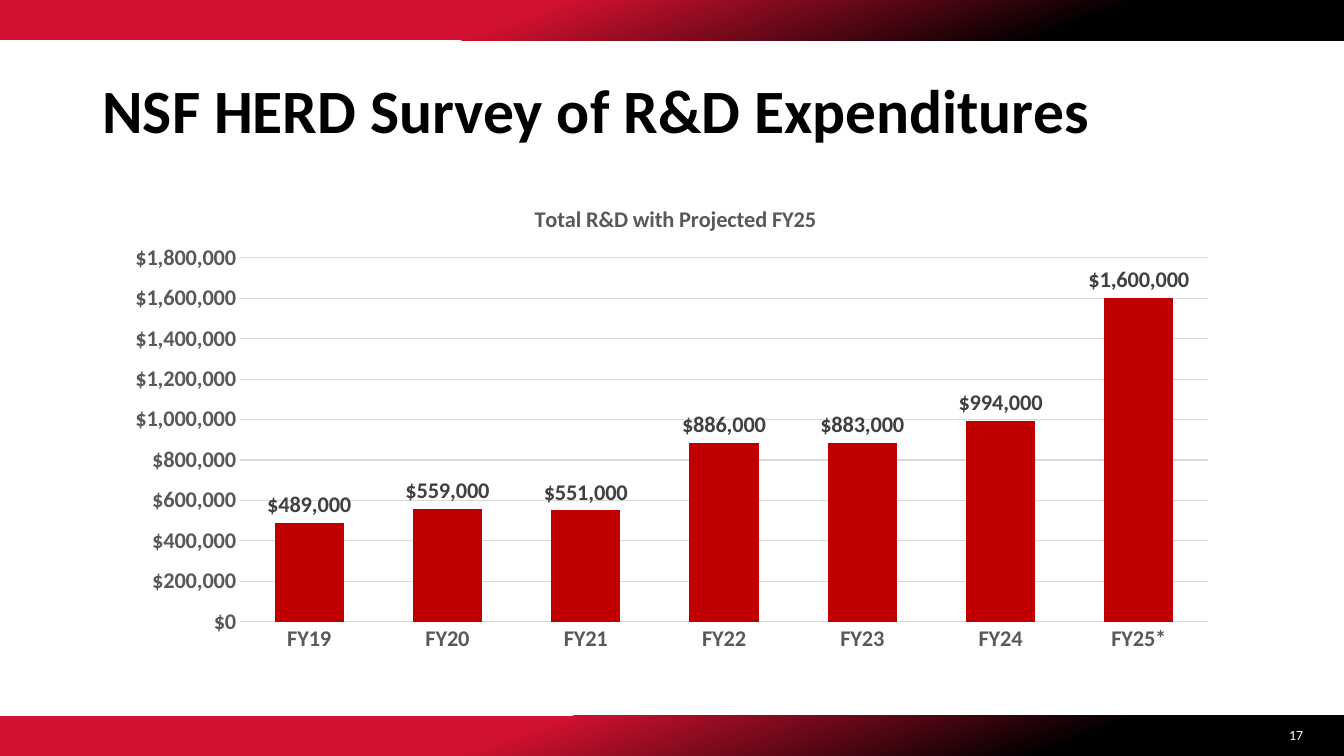
from lxml import etree
from pptx import Presentation
from pptx.chart.data import CategoryChartData
from pptx.dml.color import RGBColor
from pptx.enum.chart import XL_CHART_TYPE, XL_LABEL_POSITION, XL_TICK_MARK
from pptx.enum.shapes import MSO_SHAPE
from pptx.enum.text import MSO_ANCHOR, MSO_AUTO_SIZE, PP_ALIGN
from pptx.oxml.ns import qn
from pptx.util import Pt

COLUMN = XL_CHART_TYPE.COLUMN_CLUSTERED
OUTSIDE_END = XL_LABEL_POSITION.OUTSIDE_END
NO_TICK = XL_TICK_MARK.NONE
RECTANGLE = MSO_SHAPE.RECTANGLE
MIDDLE = MSO_ANCHOR.MIDDLE
NO_FIT = MSO_AUTO_SIZE.NONE
LEFT, RIGHT = PP_ALIGN.LEFT, PP_ALIGN.RIGHT

SLIDE_WIDTH, SLIDE_HEIGHT = 960, 540
BAND_HEIGHT = 28.8
DOLLARS = '"$"#,##0'
EXPENDITURES = {
    "FY19": 489000,
    "FY20": 559000,
    "FY21": 551000,
    "FY22": 886000,
    "FY23": 883000,
    "FY24": 994000,
    "FY25*": 1600000,
}


def rgb(hex_color):
    return RGBColor.from_string(hex_color)


def set_all(target, values):
    for name, value in values.items():
        setattr(target, name, value)


def place_in_chart(following, frame, **edges):
    """Put a manual layout before an element; edges are points on the slide."""
    layout = etree.Element(qn("c:layout"))
    manual = etree.SubElement(layout, qn("c:manualLayout"))

    def add(tag, value):
        etree.SubElement(manual, qn("c:" + tag)).set("val", str(value))

    if "width" in edges:
        add("layoutTarget", "inner")
    add("xMode", "edge")
    add("yMode", "edge")
    add("x", (Pt(edges["left"]) - frame.left) / frame.width)
    add("y", (Pt(edges["top"]) - frame.top) / frame.height)
    if "width" in edges:
        add("w", Pt(edges["width"]) / frame.width)
        add("h", Pt(edges["height"]) / frame.height)
    parent = following.getparent()
    for old in parent.findall(qn("c:layout")):
        parent.remove(old)
    following.addprevious(layout)


class SlideBuilder:
    font_name = "Calibri"
    red, black, white = "D01130", "000000", "FFFFFF"
    bar, grid, axis_text, label_text = "C00000", "D9D9D9", "595959", "404040"

    def __init__(self, slide):
        self.slide = slide

    def style_font(self, font, size, color, bold=False):
        set_all(font, {"name": self.font_name, "size": Pt(size), "bold": bold})
        font.color.rgb = rgb(color)

    def band(self, top):
        band = self.slide.shapes.add_shape(
            RECTANGLE, 0, Pt(top), Pt(SLIDE_WIDTH), Pt(BAND_HEIGHT))
        band.shadow.inherit = False
        band.line.fill.background()
        band.fill.gradient()
        band.fill.gradient_angle = 290
        stops = ((0.39, self.red), (0.79, self.black))
        for stop, (position, color) in zip(band.fill.gradient_stops, stops):
            stop.position = position
            stop.color.rgb = rgb(color)

    def fill_text(self, box, text, size, color, align, bold=False):
        set_all(box.text_frame, {"text": text, "word_wrap": True,
                                 "auto_size": NO_FIT, "vertical_anchor": MIDDLE})
        paragraph = box.text_frame.paragraphs[0]
        paragraph.alignment = align
        self.style_font(paragraph.font, size, color, bold)
        return paragraph

    def title(self, text, left, top, width, height):
        title = self.slide.shapes.title
        set_all(title, {"left": Pt(left), "top": Pt(top),
                        "width": Pt(width), "height": Pt(height)})
        heading = self.fill_text(title, text, 44, self.black, LEFT, True)
        heading.line_spacing = 0.9

    def page_number(self, text, left, top, width, height):
        box = self.slide.shapes.add_textbox(
            Pt(left), Pt(top), Pt(width), Pt(height))
        self.fill_text(box, text, 10, self.white, RIGHT)

    def column_chart(self, heading, values, left, top, width, height):
        data = CategoryChartData(number_format=DOLLARS)
        data.categories = list(values)
        data.add_series("Series 1", list(values.values()))
        frame = self.slide.shapes.add_chart(
            COLUMN, Pt(left), Pt(top), Pt(width), Pt(height), data)
        chart = frame.chart
        chart.has_legend = False
        self.style_font(chart.font, 10, self.black)

        chart.has_title = True
        chart.chart_title.text_frame.text = heading
        heading_font = chart.chart_title.text_frame.paragraphs[0].runs[0].font
        self.style_font(heading_font, 16, self.axis_text, True)

        for axis in (chart.category_axis, chart.value_axis):
            set_all(axis, {"major_tick_mark": NO_TICK, "minor_tick_mark": NO_TICK})
            self.style_font(axis.tick_labels.font, 16, self.axis_text, True)
        base_line = chart.category_axis.format.line
        base_line.width = Pt(1)
        base_line.color.rgb = rgb(self.grid)
        dollars = chart.value_axis
        set_all(dollars, {"minimum_scale": 0, "maximum_scale": 1800000,
                          "major_unit": 200000, "has_major_gridlines": True})
        set_all(dollars.tick_labels, {"number_format": DOLLARS,
                                      "number_format_is_linked": False})
        dollars.format.line.fill.background()
        grid_line = dollars.major_gridlines.format.line
        grid_line.width = Pt(0.75)
        grid_line.color.rgb = rgb(self.grid)

        plot = chart.plots[0]
        set_all(plot, {"gap_width": 100, "overlap": -24,
                       "vary_by_categories": False, "has_data_labels": True})
        bars = plot.series[0].format.fill
        bars.solid()
        bars.fore_color.rgb = rgb(self.bar)
        set_all(plot.data_labels, {
            "show_value": True, "position": OUTSIDE_END,
            "number_format": DOLLARS, "number_format_is_linked": False})
        self.style_font(plot.data_labels.font, 16, self.label_text, True)

        chart_xml = chart._chartSpace
        place_in_chart(chart_xml.find(".//" + qn("c:title") + "/" + qn("c:overlay")),
                       frame, left=379, top=143)
        place_in_chart(chart_xml.find(".//" + qn("c:barChart")), frame,
                       left=171.5, top=184.2, width=691.4, height=260)


def main():
    deck = Presentation()
    deck.slide_width, deck.slide_height = Pt(SLIDE_WIDTH), Pt(SLIDE_HEIGHT)
    builder = SlideBuilder(deck.slides.add_slide(deck.slide_layouts[5]))
    for top in (SLIDE_HEIGHT - BAND_HEIGHT, 0):
        builder.band(top)
    builder.title("NSF HERD Survey of R&D Expenditures", 66, 28.8, 828, 104.4)
    builder.page_number("17", 902, 510.6, 36, 28.8)
    builder.column_chart("Total R&D with Projected FY25", EXPENDITURES,
                         80.6, 127.4, 798.5, 345.6)
    deck.save("out.pptx")


if __name__ == "__main__":
    main()
